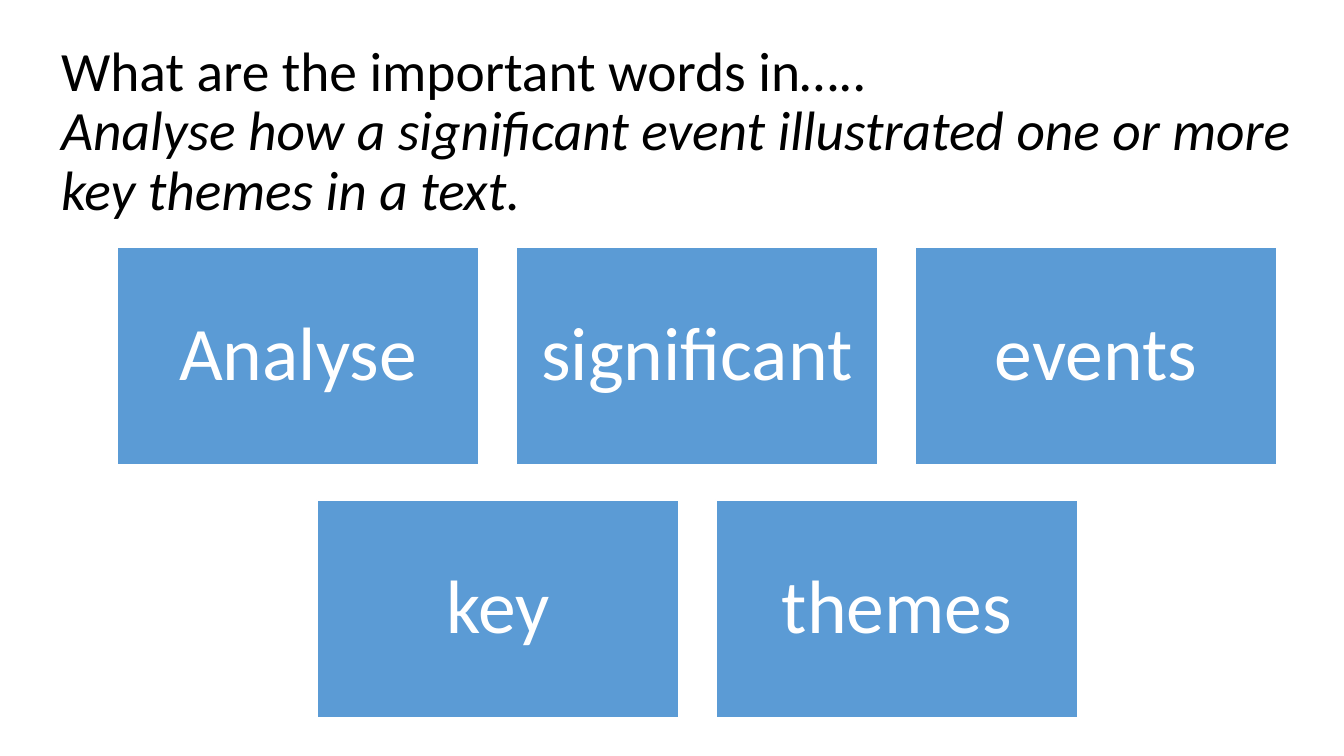
from pptx import Presentation
from pptx.dml.color import RGBColor
from pptx.enum.shapes import MSO_SHAPE
from pptx.enum.text import MSO_ANCHOR, MSO_AUTO_SIZE, PP_ALIGN
from pptx.util import Emu, Pt

EMU_PER_PX = 914400 / 100.8
COLORS = {"title": "000000", "card": "5B9BD5", "white": "FFFFFF"}

QUESTION = "What are the important words in….."
TASK = "Analyse how a significant event illustrated one or more key themes in a text."
WORD_ROWS = [["Analyse", "significant", "events"], ["key", "themes"]]

# Card grid, in px
CARD_WIDTH, CARD_HEIGHT = 362, 218
COLUMN_GAP, ROW_GAP = 37, 35
GRID_CENTER, GRID_TOP = 697, 247


def px(length):
    return Emu(round(length * EMU_PER_PX))


def color(name):
    return RGBColor.from_string(COLORS[name])


class SlideBuilder:
    font_name = "Calibri"
    line_spacing = 0.9

    def __init__(self, presentation):
        self.slide = presentation.slides.add_slide(presentation.slide_layouts[5])

    def format_paragraph(self, paragraph, size, color_name, alignment):
        paragraph.alignment = alignment
        paragraph.line_spacing = self.line_spacing
        for run in paragraph.runs:
            run.font.name = self.font_name
            run.font.size = Pt(size)
            run.font.color.rgb = color(color_name)

    def title(self, question, task, left, top, width, height):
        shape = self.slide.shapes.title
        shape.left, shape.top = px(left), px(top)
        shape.width, shape.height = px(width), px(height)
        text_frame = shape.text_frame
        text_frame.word_wrap = True
        text_frame.auto_size = MSO_AUTO_SIZE.NONE
        text_frame.vertical_anchor = MSO_ANCHOR.MIDDLE
        text_frame.margin_bottom = px(65)
        paragraph = text_frame.paragraphs[0]
        paragraph.text = f"{question}\v{task}"
        self.format_paragraph(paragraph, 39.6, "title", PP_ALIGN.LEFT)
        paragraph.runs[-1].font.italic = True

    def card(self, word, left, top):
        shape = self.slide.shapes.add_shape(
            MSO_SHAPE.RECTANGLE, px(left), px(top), px(CARD_WIDTH), px(CARD_HEIGHT))
        shape.shadow.inherit = False
        shape.fill.solid()
        shape.fill.fore_color.rgb = color("card")
        shape.line.color.rgb = color("white")
        shape.line.width = Pt(1)
        text_frame = shape.text_frame
        text_frame.word_wrap = True
        text_frame.vertical_anchor = MSO_ANCHOR.MIDDLE
        text_frame.margin_left = text_frame.margin_right = px(23)
        text_frame.margin_top = text_frame.margin_bottom = px(23)
        text_frame.text = word
        self.format_paragraph(text_frame.paragraphs[0], 54, "white", PP_ALIGN.CENTER)


def main():
    presentation = Presentation()
    presentation.slide_width, presentation.slide_height = px(1344), px(756)
    builder = SlideBuilder(presentation)

    # Question at the top
    builder.title(QUESTION, TASK, 51, 32, 1270, 262)

    # Key words, each row centred on the same axis
    for row, words in enumerate(WORD_ROWS):
        row_width = len(words) * (CARD_WIDTH + COLUMN_GAP) - COLUMN_GAP
        row_left = GRID_CENTER - row_width // 2
        top = GRID_TOP + row * (CARD_HEIGHT + ROW_GAP)
        for column, word in enumerate(words):
            builder.card(word, row_left + column * (CARD_WIDTH + COLUMN_GAP), top)

    presentation.save("out.pptx")


if __name__ == "__main__":
    main()
